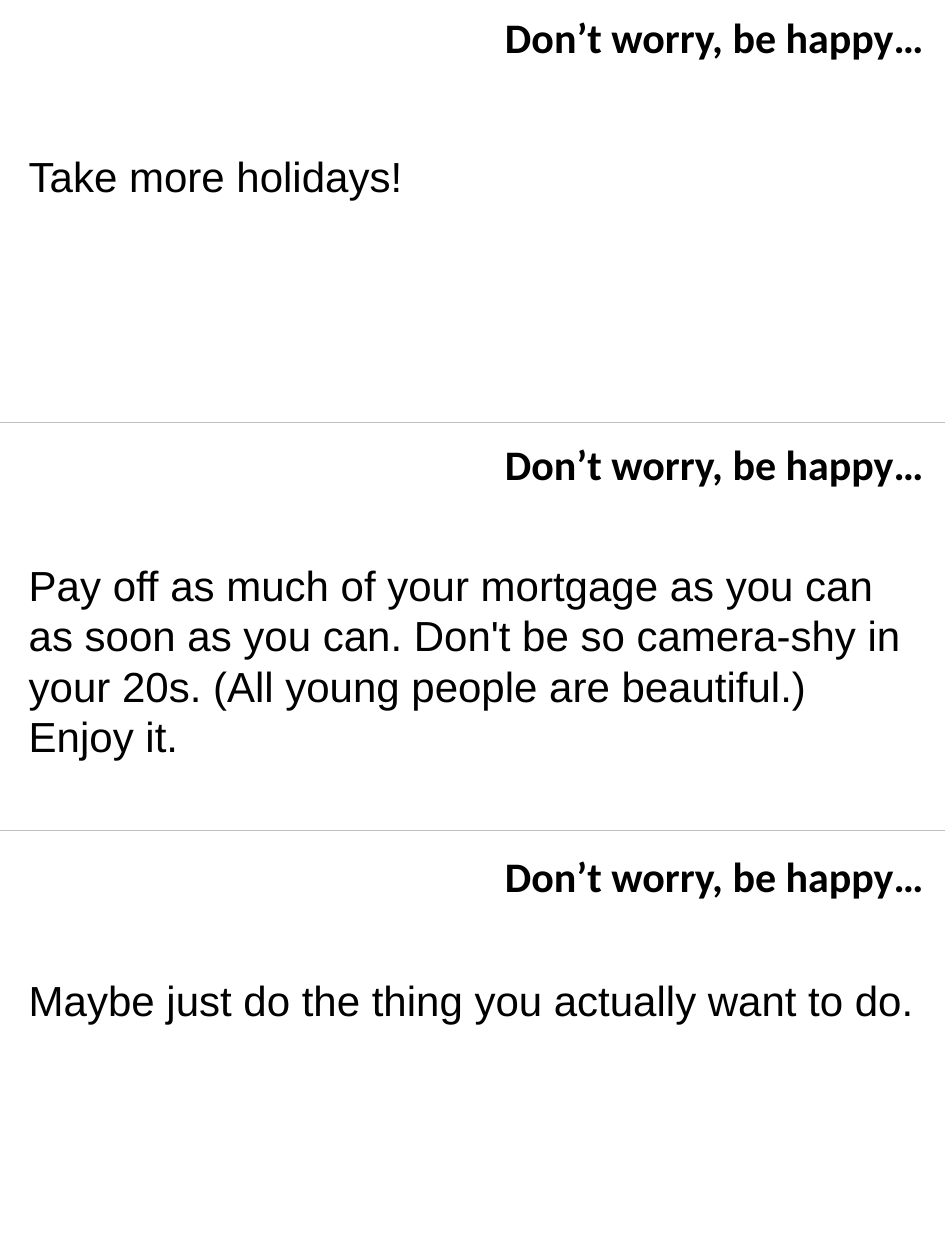
from pptx import Presentation
from pptx.dml.color import RGBColor
from pptx.enum.shapes import MSO_CONNECTOR
from pptx.enum.text import MSO_ANCHOR, MSO_AUTO_SIZE, PP_ALIGN
from pptx.oxml.ns import qn
from pptx.util import Cm, Pt
from lxml.etree import SubElement

BLACK = RGBColor(0x00, 0x00, 0x00)
GREY = RGBColor(0xBF, 0xBF, 0xBF)
WIDTH, HEIGHT = Cm(19.05), Cm(25.4)
HEADING = "Don’t worry, be happy…"
CARDS = [
    (0, 0.1, 2.9, "Take more holidays!"),
    (8.51, 0.2, 2.64,
     "Pay off as much of your mortgage as you can as soon as you can. "
     "Don't be so camera-shy in your 20s. "
     "(All young people are beautiful.) Enjoy it."),
    (16.74, 0.28, 2.77, "Maybe just do the thing you actually want to do."),
]


def write_text(sp, text, font="Arial", size=24, bold=False, color=BLACK):
    """Fill a shape with one left-aligned paragraph in the given format."""
    tf = sp.text_frame
    tf.word_wrap = True
    tf.auto_size = MSO_AUTO_SIZE.NONE
    tf.vertical_anchor = MSO_ANCHOR.TOP
    tf.margin_left = tf.margin_right = Cm(0.25)
    tf.margin_top = tf.margin_bottom = Cm(0.13)
    p = tf.paragraphs[0]
    p.alignment = PP_ALIGN.LEFT
    r = p.add_run()
    r.text = text
    r.font.name, r.font.size, r.font.bold = font, Pt(size), bold
    r.font.color.rgb = color


def add_divider(s, top):
    """Draw a thin rule across the slide."""
    line = s.shapes.add_connector(MSO_CONNECTOR.STRAIGHT, 0, top, WIDTH, top)
    line.line.color.rgb = GREY
    line.line.width = Pt(0.75)
    SubElement(line._element.spPr, qn("a:effectLst"))


def add_card(s, top, heading_gap, message_gap, message, title=None):
    """Place a heading and a message below the top edge of a card."""
    sp = title or s.shapes.add_textbox(0, 0, 0, 0)
    sp.left, sp.top = Cm(9.93), top + heading_gap
    sp.width, sp.height = Cm(8.99), Cm(1.27)
    write_text(sp, HEADING, font="Calibri", bold=True)
    body = s.shapes.add_textbox(Cm(0.33), top + message_gap, Cm(18.39), Cm(5.59))
    write_text(body, message)


def main():
    """Build the sheet of cards and save it."""
    prs = Presentation()
    prs.slide_width, prs.slide_height = WIDTH, HEIGHT
    s = prs.slides.add_slide(prs.slide_layouts[5])
    for i, (top, heading_gap, message_gap, message) in enumerate(CARDS):
        title = None if i else s.shapes.title
        add_card(s, Cm(top), Cm(heading_gap), Cm(message_gap), message, title)
        if i:
            add_divider(s, Cm(top))
    prs.save("out.pptx")


if __name__ == "__main__":
    main()
